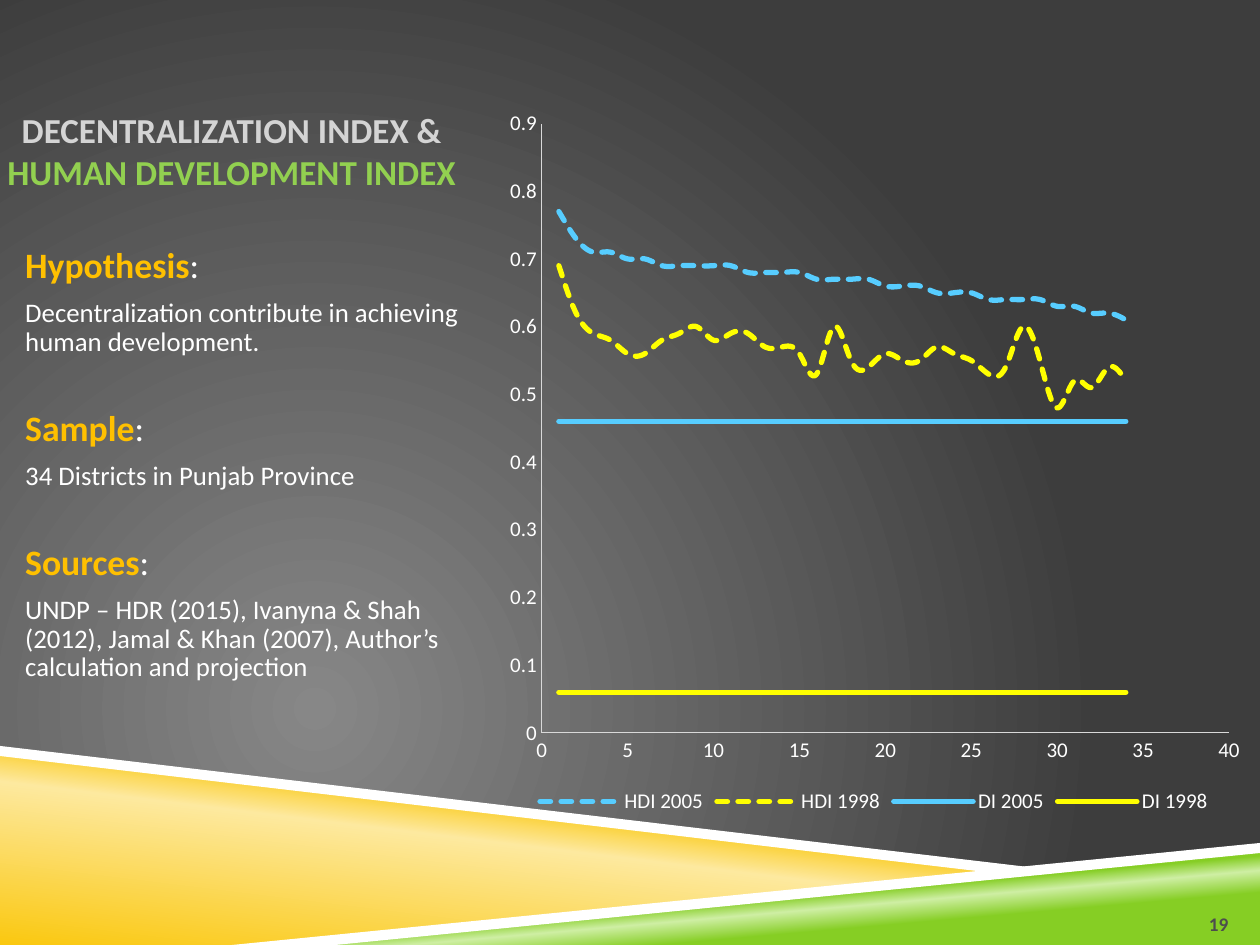
from typing import NamedTuple

from lxml import etree
from pptx import Presentation
from pptx import util as u
from pptx.chart import data as cdata
from pptx.dml.color import RGBColor
from pptx.enum import chart as ch, dml, text
from pptx.oxml import ns, parse_xml

PX = 9144  # 100 px to the inch
FONT = "Calibri"
WHITE, GOLD, SKY, YELLOW = "FFFFFF", "FFC000", "57CDFF", "FFFF00"
NS = ns.nsdecls("a", "c")


class Run(NamedTuple):
    words: str
    size: float
    color: str = WHITE
    bold: bool = False


class Para(NamedTuple):
    runs: list[Run]
    before: float = 0
    line: float = 1
    align: text.PP_ALIGN = text.PP_ALIGN.LEFT


class Fade(NamedTuple):
    stops: list[tuple[int, str]]
    way: str


class Band(NamedTuple):
    points: list[tuple[int, int]]
    fill: Fade | str


class Curve(NamedTuple):
    name: str
    values: list[float]
    color: str
    dashed: bool


def rgb(code: str) -> RGBColor:
    return RGBColor.from_string(code)


def linear(angle: int) -> str:
    return f'<a:lin ang="{angle * 60000}" scaled="0"/>'


def fade_in(root: etree._Element, fade: Fade) -> None:
    """Swap the first solid fill under root for a gradient."""
    stops = "".join(
        f'<a:gs pos="{pos * 1000}"><a:srgbClr val="{code}"/></a:gs>'
        for pos, code in fade.stops
    )
    solid = root.find(".//" + ns.qn("a:solidFill"))
    grad = parse_xml(
        f'<a:gradFill {NS} rotWithShape="1"><a:gsLst>{stops}</a:gsLst>'
        f"{fade.way}</a:gradFill>"
    )
    solid.getparent().replace(solid, grad)


def add_band(slide, band: Band) -> None:
    first, *rest = band.points
    pen = slide.shapes.build_freeform(*first, scale=PX)
    pen.add_line_segments(rest, close=True)
    shape = pen.convert_to_shape()
    shape.shadow.inherit = False
    shape.line.fill.background()
    shape.fill.solid()
    if isinstance(band.fill, Fade):
        fade_in(shape._element, band.fill)
    else:
        shape.fill.fore_color.rgb = rgb(band.fill)


def add_text(slide, box: tuple[int, ...], paras: list[Para],
             anchor: text.MSO_ANCHOR, foot: int = 5) -> None:
    frame = slide.shapes.add_textbox(*(n * PX for n in box)).text_frame
    frame.word_wrap = True
    frame.vertical_anchor = anchor
    frame.margin_left = frame.margin_right = 0
    frame.margin_top, frame.margin_bottom = 5 * PX, foot * PX
    for i, item in enumerate(paras):
        para = frame.add_paragraph() if i else frame.paragraphs[0]
        para.alignment = item.align
        para.line_spacing = item.line
        para.space_before = u.Pt(item.before)
        for part in item.runs:
            run = para.add_run()
            run.text = part.words
            style(run.font, part.size, part.color, part.bold)


def style(font, size: float, color: str = WHITE, bold: bool = False) -> None:
    font.name, font.size, font.bold = FONT, u.Pt(size), bold
    font.color.rgb = rgb(color)


def set_axis(axis, top: float, step: float) -> None:
    axis.minimum_scale, axis.maximum_scale, axis.major_unit = 0, top, step
    axis.has_major_gridlines = False
    axis.major_tick_mark = axis.minor_tick_mark = ch.XL_TICK_MARK.NONE
    axis.tick_labels.number_format = "General"
    axis.tick_labels.number_format_is_linked = False
    style(axis.tick_labels.font, 12)
    axis.format.line.color.rgb = rgb("D9D9D9")
    axis.format.line.width = u.Pt(0.75)


def place_plot(chart, x: float, y: float, w: float, h: float) -> None:
    area = chart._chartSpace.find(".//" + ns.qn("c:plotArea"))
    for old in area.findall(ns.qn("c:layout")):
        area.remove(old)
    spots = "".join(f'<c:{k} val="{v}"/>' for k, v in zip("xywh", (x, y, w, h)))
    area.insert(0, parse_xml(
        f'<c:layout {NS}><c:manualLayout><c:layoutTarget val="inner"/>'
        f'<c:xMode val="edge"/><c:yMode val="edge"/>{spots}'
        "</c:manualLayout></c:layout>"
    ))


def add_curves(slide, box: tuple[int, ...], curves: list[Curve]) -> None:
    data = cdata.XyChartData()
    for curve in curves:
        row = data.add_series(curve.name)
        for x, y in enumerate(curve.values, 1):
            row.add_data_point(x, y)
    kind = ch.XL_CHART_TYPE.XY_SCATTER_SMOOTH_NO_MARKERS
    chart = slide.shapes.add_chart(kind, *(n * PX for n in box), data).chart
    style(chart.font, 10)
    chart.has_title = False
    chart.has_legend = True
    chart.legend.position = ch.XL_LEGEND_POSITION.BOTTOM
    chart.legend.include_in_layout = False
    style(chart.legend.font, 12)
    set_axis(chart.category_axis, 40, 5)
    set_axis(chart.value_axis, 0.9, 0.1)
    place_plot(chart, 0.07, 0.03, 0.89, 0.85)
    plot = chart.plots[0]
    plot.vary_by_categories = False
    for curve, row in zip(curves, plot.series):
        line = row.format.line
        line.color.rgb = rgb(curve.color)
        line.width = u.Pt(3)
        if curve.dashed:
            line.dash_style = dml.MSO_LINE.SQUARE_DOT
        row._element.find(".//" + ns.qn("a:ln")).set("cap", "rnd")
        row._element.find(ns.qn("c:smooth")).set("val", "1")


def topic(head: str, body: str, before: float) -> list[Para]:
    return [
        Para([Run(head, 20.4, GOLD, True), Run(":", 20.4)], before, 0.9),
        Para([Run(body, 15.3)], 7, 0.9),
    ]


GLOW = Fade([(0, "878787"), (100, "3D3D3D")],
            '<a:path path="circle"><a:fillToRect l="50000" t="100000" '
            'r="100000" b="50000"/></a:path>')
GREEN = Fade([(28, "86CE24"), (40, "CFEFA4"), (48, "86CE24")], linear(265))
AMBER = Fade([(0, "FAC810"), (52, "FDE99F"), (66, "FAC810")], linear(277))
BANDS = [
    Band([(198, 750), (1000, 672), (1000, 750)], GREEN),
    Band([(0, 597), (792, 692), (200, 750), (0, 750)], AMBER),
    Band([(0, 592), (0, 600), (790, 693), (832, 690)], WHITE),
    Band([(1000, 669), (184, 750), (266, 750), (1000, 677)], WHITE),
]
HDI_05 = [0.77, 0.73, 0.71, 0.71, 0.7, 0.7, 0.69, 0.69, 0.69, 0.69, 0.69, 0.68,
          0.68, 0.68, 0.68, 0.67, 0.67, 0.67, 0.67, 0.66, 0.66, 0.66, 0.65,
          0.65, 0.65, 0.64, 0.64, 0.64, 0.64, 0.63, 0.63, 0.62, 0.62, 0.61]
HDI_98 = [0.69, 0.62, 0.59, 0.58, 0.56, 0.56, 0.58, 0.59, 0.6, 0.58, 0.59, 0.59,
          0.57, 0.57, 0.56, 0.53, 0.6, 0.55, 0.54, 0.56, 0.55, 0.55, 0.57,
          0.56, 0.55, 0.53, 0.54, 0.6, 0.55, 0.48, 0.52, 0.51, 0.54, 0.52]
CURVES = [
    Curve("HDI 2005", HDI_05, SKY, True),
    Curve("HDI 1998", HDI_98, YELLOW, True),
    Curve("DI 2005", [0.46] * 34, SKY, False),
    Curve("DI 1998", [0.06] * 34, YELLOW, False),
]
TITLE = Para([Run("DECENTRALIZATION INDEX & ", 20, "D4D4D4", True),
              Run("HUMAN DEVELOPMENT INDEX", 20, "92D050", True)],
             align=text.PP_ALIGN.CENTER)
TOPICS = [
    *topic("Hypothesis",
           "Decentralization contribute in achieving human development.", 0),
    *topic("Sample", "34 Districts in Punjab Province", 31),
    *topic("Sources", "UNDP – HDR (2015), Ivanyna & Shah (2012), Jamal & Khan "
           "(2007), Author’s calculation and projection", 31),
]
NUMBER = Para([Run("19", 11, "4D4D4D", True)], align=text.PP_ALIGN.RIGHT)


def main() -> None:
    deck = Presentation()
    deck.slide_width, deck.slide_height = 1000 * PX, 750 * PX
    slide = deck.slides.add_slide(deck.slide_layouts[6])
    slide.background.fill.solid()
    slide.background.fill.fore_color.rgb = rgb("3D3D3D")
    fade_in(slide.element, GLOW)
    for band in BANDS:
        add_band(slide, band)
    add_text(slide, (-19, 29, 406, 129), [TITLE], text.MSO_ANCHOR.BOTTOM)
    add_text(slide, (20, 192, 351, 414), TOPICS, text.MSO_ANCHOR.TOP)
    add_curves(slide, (387, 81, 613, 569), CURVES)
    add_text(slide, (925, 702, 50, 40), [NUMBER], text.MSO_ANCHOR.BOTTOM, 0)
    deck.save("out.pptx")


if __name__ == "__main__":
    main()
